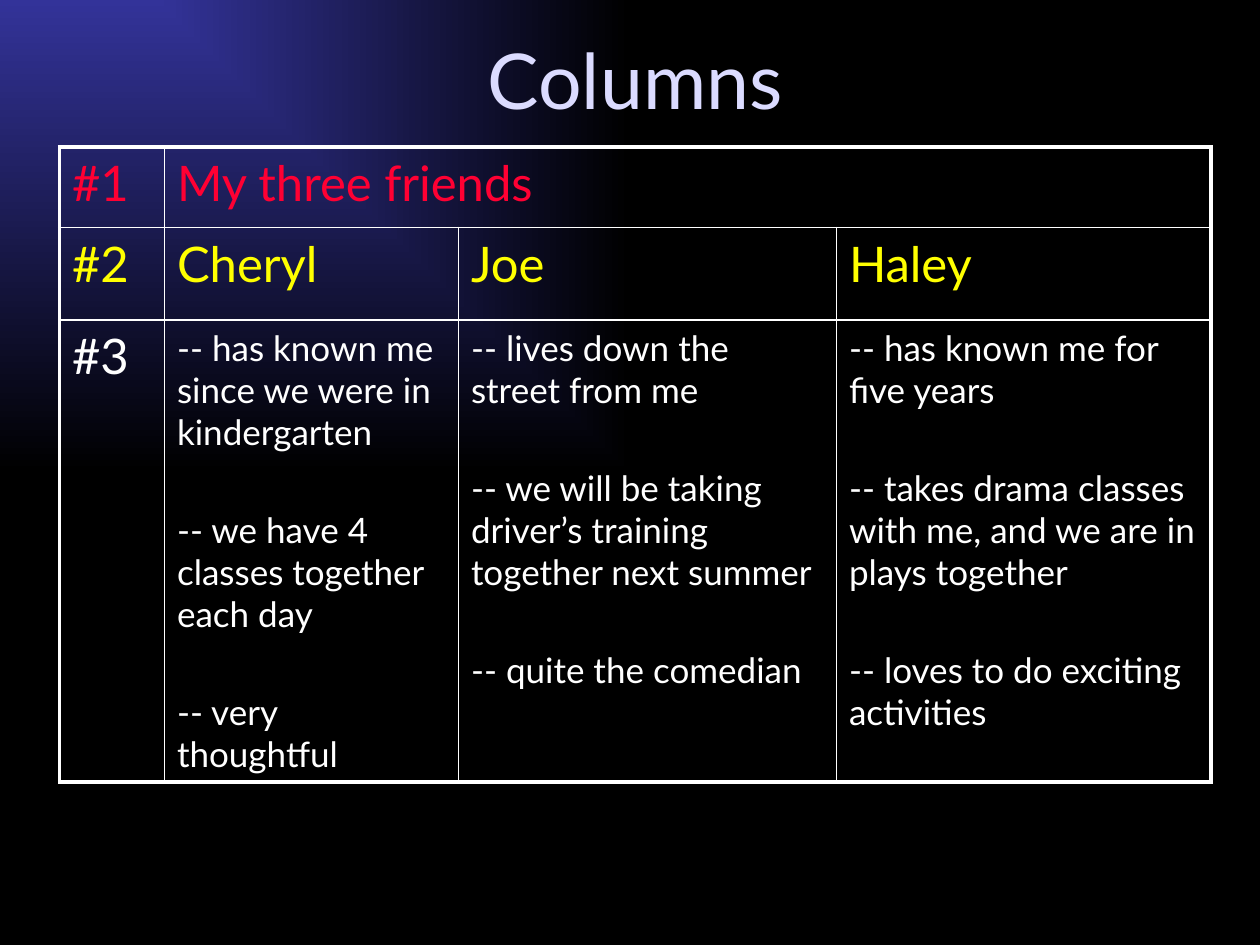
import pptx
import pptx.util
from lxml import etree
from pptx.dml.color import RGBColor
from pptx.enum.text import MSO_ANCHOR, PP_ALIGN
from pptx.oxml.ns import qn
from pptx.util import Pt

COLORS = {
    "glow": "333399", "night": "000000", "title": "DBDBFF",
    "topic": "FF0033", "names": "FFFF00", "details": "FFFFFF", "rule": "FFFFFF",
}
FONT = "Lato"
OUTER, INNER = 2.25, 1
ITEM_GAP = 31.8

COLUMN_WIDTHS = [60, 168, 216, 214]
ROW_HEIGHTS = [46, 53, 264]
ROWS = [
    ("topic", 28, [["#1"], ["My three friends"], [], []]),
    ("names", 28, [["#2"], ["Cheryl"], ["Joe"], ["Haley"]]),
    ("details", 20, [
        ["#3"],
        ["-- has known me since we were in kindergarten",
         "-- we have 4 classes together each day",
         "-- very thoughtful"],
        ["-- lives down the street from me",
         "-- we will be taking driver’s training together next summer",
         "-- quite the comedian"],
        ["-- has known me for five years",
         "-- takes drama classes with me, and we are in plays together",
         "-- loves to do exciting activities"],
    ]),
]


def rgb(name):
    return RGBColor.from_string(COLORS[name])


def apply(target, values):
    for name, value in values.items():
        setattr(target, name, value)


def write(paragraph, text, size, color):
    run = paragraph.add_run()
    run.text = text
    apply(run.font, {"name": FONT, "size": Pt(size), "bold": False})
    run.font.color.rgb = rgb(color)


def paint_background(slide):
    """Gradient that spreads from the top left corner."""
    fill = slide.background.fill
    fill.gradient()
    for stop, color in zip(fill.gradient_stops, ("glow", "night")):
        stop.color.rgb = rgb(color)
    gradient = next(slide.background._cSld.iter(qn("a:gradFill")))
    spread = etree.Element(qn("a:path"), {"path": "rect"})
    etree.SubElement(spread, qn("a:fillToRect"), {"r": "100000", "b": "100000"})
    gradient.replace(gradient.find(qn("a:lin")), spread)


def place_title(slide, left, top, width, height):
    title = slide.shapes.title
    apply(title, {"left": Pt(left), "top": Pt(top),
                  "width": Pt(width), "height": Pt(height)})
    apply(title.text_frame, {"vertical_anchor": MSO_ANCHOR.MIDDLE, "word_wrap": True})
    heading = title.text_frame.paragraphs[0]
    heading.alignment = PP_ALIGN.CENTER
    write(heading, "Columns", 44, "title")


def draw_borders(cell, widths):
    properties = cell._tc.get_or_add_tcPr()
    for position, (side, width) in enumerate(widths.items()):
        line = etree.Element(qn(f"a:ln{side}"), {"w": str(int(Pt(width)))})
        solid = etree.SubElement(line, qn("a:solidFill"))
        etree.SubElement(solid, qn("a:srgbClr"), {"val": COLORS["rule"]})
        properties.insert(position, line)


def fill_cell(cell, items, size, color):
    for index, item in enumerate(items):
        frame = cell.text_frame
        paragraph = frame.add_paragraph() if index else frame.paragraphs[0]
        paragraph.space_before = Pt(ITEM_GAP if index else 0)
        write(paragraph, item, size, color)


def place_friends(slide, left, top):
    last_row, last_column = len(ROWS) - 1, len(COLUMN_WIDTHS) - 1
    friends = slide.shapes.add_table(
        len(ROWS), len(COLUMN_WIDTHS), Pt(left), Pt(top),
        Pt(sum(COLUMN_WIDTHS)), Pt(sum(ROW_HEIGHTS))).table
    apply(friends, {"first_row": False, "horz_banding": False})
    for column, width in zip(friends.columns, COLUMN_WIDTHS):
        column.width = Pt(width)
    for row, height in zip(friends.rows, ROW_HEIGHTS):
        row.height = Pt(height)
    friends.cell(0, 1).merge(friends.cell(0, last_column))

    for r, (color, size, cells) in enumerate(ROWS):
        for c, items in enumerate(cells):
            cell = friends.cell(r, c)
            cell.fill.background()
            draw_borders(cell, {
                "L": OUTER if c == 0 else INNER,
                "R": OUTER if c == last_column or (r, c) == (0, 1) else INNER,
                "T": OUTER if r == 0 else INNER,
                "B": OUTER if r == last_row else INNER,
            })
            fill_cell(cell, items, size if c else 28, color)


def main():
    deck = pptx.Presentation()
    apply(deck, {"slide_width": Pt(720), "slide_height": Pt(540)})
    slide = deck.slides.add_slide(deck.slide_layouts[5])
    paint_background(slide)
    place_title(slide, 24, 6, 678, 78)
    place_friends(slide, 34, 84)
    deck.save("out.pptx")


if __name__ == "__main__":
    main()
